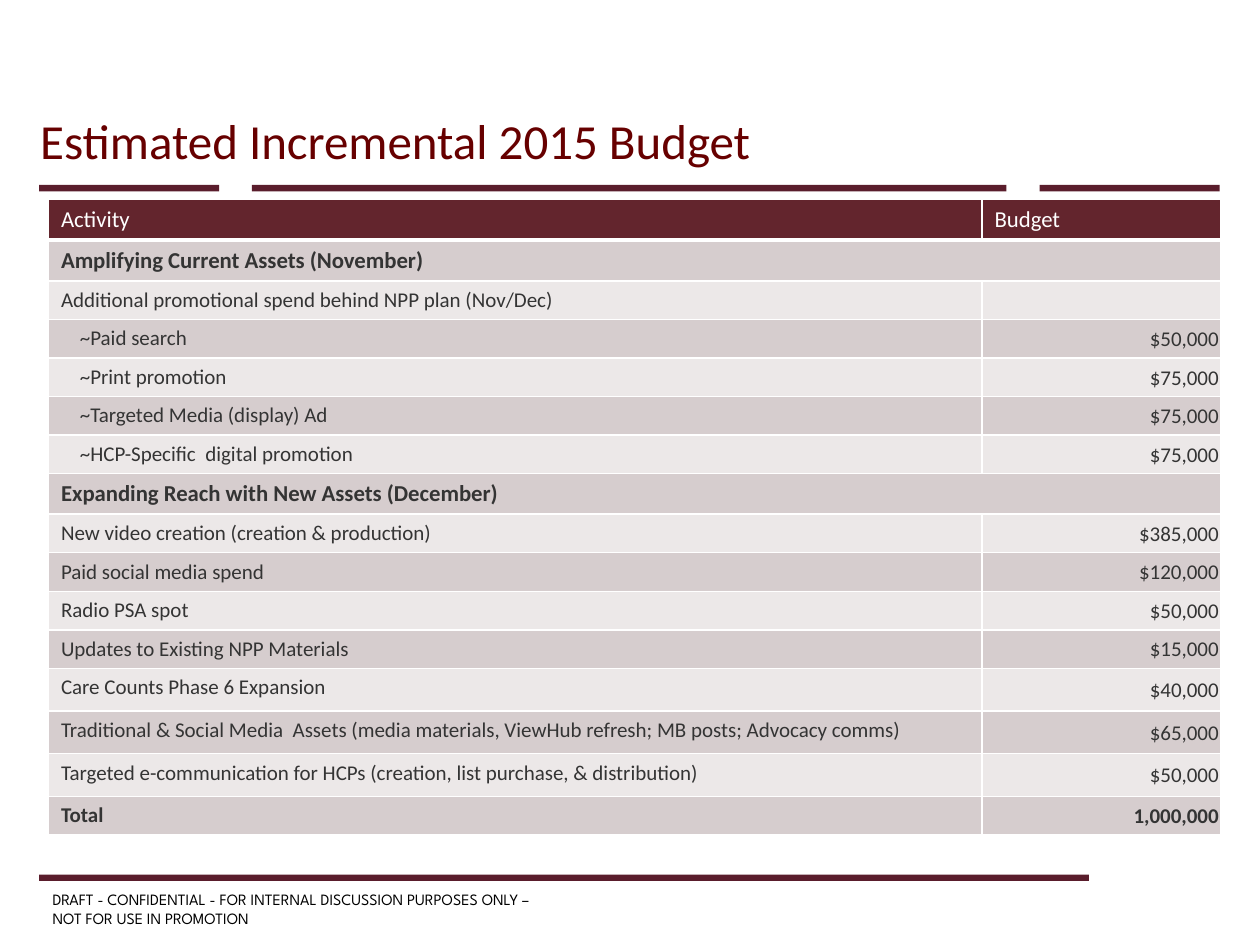
from lxml import etree
from pptx import Presentation
from pptx.dml.color import RGBColor
from pptx.enum.shapes import MSO_SHAPE
from pptx.enum.text import MSO_ANCHOR, PP_ALIGN
from pptx.oxml.ns import qn
from pptx.util import Cm, Pt

RECTANGLE = MSO_SHAPE.RECTANGLE
TOP, MIDDLE, BOTTOM = MSO_ANCHOR.TOP, MSO_ANCHOR.MIDDLE, MSO_ANCHOR.BOTTOM
LEFT, RIGHT = PP_ALIGN.LEFT, PP_ALIGN.RIGHT

BLACK = RGBColor(0x00, 0x00, 0x00)
WHITE = RGBColor(0xFF, 0xFF, 0xFF)
TITLE_RED = RGBColor(0x67, 0x00, 0x00)
RULE_RED = RGBColor(0x5A, 0x1D, 0x2C)
HEADER_RED = RGBColor(0x63, 0x25, 0x2D)
BODY_GREY = RGBColor(0x34, 0x34, 0x34)
DARK_BAND = RGBColor(0xD6, 0xCD, 0xCE)
LIGHT_BAND = RGBColor(0xEC, 0xE8, 0xE8)

TITLE = "Estimated Incremental 2015 Budget"
FOOTER_LINES = [
    "DRAFT - CONFIDENTIAL - FOR INTERNAL DISCUSSION PURPOSES ONLY – ",
    "NOT FOR USE IN PROMOTION",
]
# Row kind, activity, budget
ROWS = [
    ("header", "Activity", "Budget"),
    ("section", "Amplifying Current Assets (November)", ""),
    ("item", "Additional promotional spend behind NPP plan (Nov/Dec)", ""),
    ("subitem", "~Paid search", "$50,000"),
    ("subitem", "~Print promotion", "$75,000"),
    ("subitem", "~Targeted Media (display) Ad", "$75,000"),
    ("subitem", "~HCP-Specific  digital promotion", "$75,000"),
    ("section", "Expanding Reach with New Assets (December)", ""),
    ("item", "New video creation (creation & production)", "$385,000"),
    ("item", "Paid social media spend", "$120,000"),
    ("item", "Radio PSA spot", "$50,000"),
    ("item", "Updates to Existing NPP Materials", "$15,000"),
    ("tall", "Care Counts Phase 6 Expansion", "$40,000"),
    ("tall", "Traditional & Social Media  Assets (media materials, "
             "ViewHub refresh; MB posts; Advocacy comms)", "$65,000"),
    ("tall", "Targeted e-communication for HCPs "
             "(creation, list purchase, & distribution)", "$50,000"),
    ("total", "Total", "1,000,000"),
]
# Row kind: height in cm, text size in points, bold
ROW_STYLES = {
    "header": (0.8, 13, False),
    "section": (0.81, 13, True),
    "item": (0.77, 12, False),
    "subitem": (0.77, 12, False),
    "tall": (0.86, 12, False),
    "total": (0.76, 12, True),
}
COLUMN_WIDTHS = [18.82, 4.8]
# Left, top, width in cm
RULES = [(0.79, 3.73, 3.63), (5.08, 3.73, 15.21), (20.96, 3.73, 3.63),
         (0.79, 17.63, 21.16)]
RULE_HEIGHT = 0.13


def add_run(paragraph, text, size, color, font="Calibri", bold=False):
    run = paragraph.add_run()
    run.text = text
    run.font.name = font
    run.font.size = Pt(size)
    run.font.bold = bold
    run.font.color.rgb = color


def set_margins(target, left, top, right, bottom):
    target.margin_left, target.margin_top = Cm(left), Cm(top)
    target.margin_right, target.margin_bottom = Cm(right), Cm(bottom)


def add_borders(cell, bottom_width):
    properties = cell._tc.get_or_add_tcPr()
    for side in "LRTB":
        width = bottom_width if side == "B" else 1
        line = etree.SubElement(properties, qn(f"a:ln{side}"), w=str(Pt(width)))
        fill = etree.SubElement(line, qn("a:solidFill"))
        etree.SubElement(fill, qn("a:srgbClr"), val=str(WHITE))


def fill_cell(cell, kind, text, band, is_amount):
    size, bold = ROW_STYLES[kind][1:]
    is_header = kind == "header"
    add_borders(cell, 3 if is_header else 1)
    cell.fill.solid()
    cell.fill.fore_color.rgb = HEADER_RED if is_header else band
    paragraph = cell.text_frame.paragraphs[0]
    if not text:
        # Keeps the empty line from stretching the row
        etree.SubElement(paragraph._p, qn("a:endParaRPr"), sz=str(size * 100))
        return
    add_run(paragraph, text, size, WHITE if is_header else BODY_GREY, bold=bold)
    if is_amount and not is_header:
        paragraph.alignment = RIGHT
        cell.vertical_anchor = MIDDLE
        set_margins(cell, 0.03, 0.03, 0.03, 0)
    else:
        paragraph.alignment = LEFT
        cell.vertical_anchor = MIDDLE if kind == "total" else TOP
        set_margins(cell, 0.63 if kind == "subitem" else 0.25, 0.13, 0.25, 0.13)


def add_budget_table(slide):
    heights = [ROW_STYLES[kind][0] for kind, _, _ in ROWS]
    table = slide.shapes.add_table(
        len(ROWS), len(COLUMN_WIDTHS), Cm(0.98), Cm(4.02),
        Cm(sum(COLUMN_WIDTHS)), Cm(sum(heights))).table
    for column, width in zip(table.columns, COLUMN_WIDTHS):
        column.width = Cm(width)
    for index, (kind, *texts) in enumerate(ROWS):
        table.rows[index].height = Cm(heights[index])
        band = DARK_BAND if index % 2 else LIGHT_BAND
        for column, text in enumerate(texts):
            fill_cell(table.cell(index, column), kind, text, band, column == 1)
        if kind == "section":
            table.cell(index, 0).merge(table.cell(index, 1))


def add_title(slide):
    title = slide.shapes.title
    title.left, title.top, title.width, title.height = (
        Cm(0.81), Cm(1.07), Cm(22.86), Cm(2.34))
    frame = title.text_frame
    frame.word_wrap = True
    frame.vertical_anchor = BOTTOM
    set_margins(frame, 0, 0, 0, 0)
    frame.paragraphs[0].alignment = LEFT
    add_run(frame.paragraphs[0], TITLE, 28, TITLE_RED)


def add_rules(slide):
    for left, top, width in RULES:
        rule = slide.shapes.add_shape(
            RECTANGLE, Cm(left), Cm(top), Cm(width), Cm(RULE_HEIGHT))
        rule.shadow.inherit = False
        rule.fill.solid()
        rule.fill.fore_color.rgb = RULE_RED
        rule.line.fill.background()


def add_footer(slide):
    footer = slide.shapes.add_textbox(Cm(0.81), Cm(17.81), Cm(13.46), Cm(1.02))
    frame = footer.text_frame
    frame.word_wrap = True
    set_margins(frame, 0.25, 0.13, 0.25, 0.13)
    paragraph = frame.paragraphs[0]
    for index, line in enumerate(FOOTER_LINES):
        if index:
            paragraph.add_line_break()
        add_run(paragraph, line, 9, BLACK, font="League Spartan")


def main():
    presentation = Presentation()
    presentation.slide_width, presentation.slide_height = Cm(25.4), Cm(19.05)
    slide = presentation.slides.add_slide(presentation.slide_layouts[5])
    add_rules(slide)
    add_title(slide)
    add_budget_table(slide)
    add_footer(slide)
    presentation.save("out.pptx")


if __name__ == "__main__":
    main()
